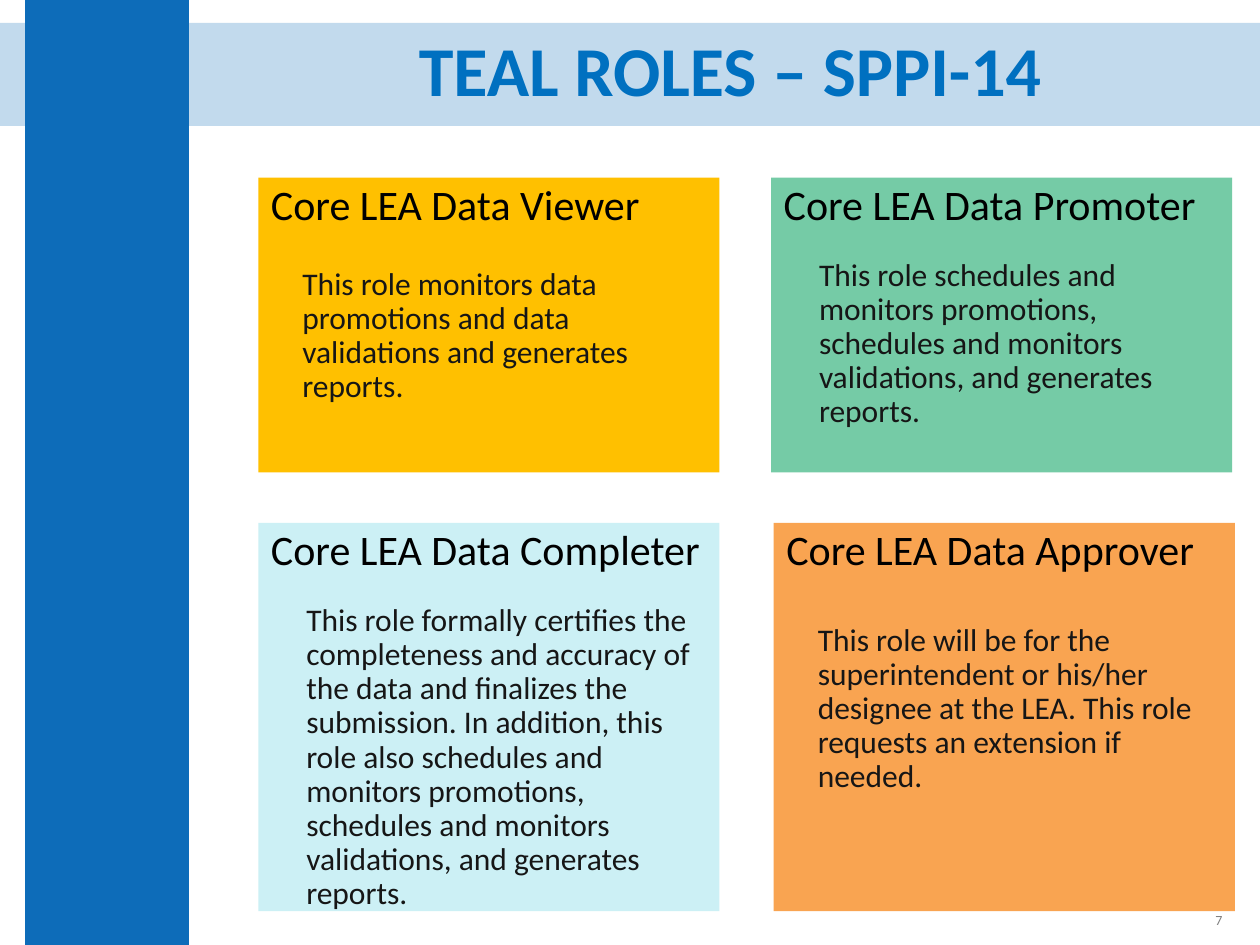
from lxml.etree import SubElement
from pptx import Presentation
from pptx.dml.color import RGBColor
from pptx.enum.shapes import MSO_SHAPE as Shape
from pptx.enum.text import MSO_ANCHOR as Anchor, MSO_AUTO_SIZE as AutoSize, PP_ALIGN as Align
from pptx.oxml.ns import qn
from pptx.util import Pt

COLORS = {
    "bar": "0D6CB9", "title": "0070C0", "heading": "000000", "body": "161616",
    "number": "808080", "viewer": "FFC000", "promoter": "75CBA6",
    "completer": "CCF0F5", "approver": "F9A451",
}
FONT = "Calibri"
COMPARISON_LAYOUT = 4  # a title and four bodies

# Fill, box (left, top, width, height), gap under heading, body indent, heading, body
ROLES = [
    ("viewer", (147.6, 101.5, 263.5, 168.5), 22, 18, "Core LEA Data Viewer",
     "This role monitors data promotions and data validations and generates reports."),
    ("promoter", (440.6, 101.5, 263.5, 168.5), 17.2, 20.2, "Core LEA Data Promoter",
     "This role schedules and monitors promotions, schedules and monitors "
     "validations, and generates reports."),
    ("completer", (147.6, 298.8, 263.5, 221.8), 17.2, 20.2, "Core LEA Data Completer",
     "This role formally certifies the completeness and accuracy of the data and "
     "finalizes the submission. In addition, this role also schedules and monitors "
     "promotions, schedules and monitors validations, and generates reports."),
    ("approver", (442.1, 298.8, 263.5, 221.8), 28.5, 18, "Core LEA Data Approver",
     "This role will be for the superintendent or his/her designee at the LEA. "
     "This role requests an extension if needed."),
]


def color(name):
    return RGBColor.from_string(COLORS[name])


def place(shape, box):
    shape.left, shape.top, shape.width, shape.height = map(Pt, box)


def prepare_frame(shape, anchor):
    frame = shape.text_frame
    frame.word_wrap = True
    frame.auto_size = AutoSize.NONE
    frame.vertical_anchor = anchor
    return frame


def style(paragraph, size, color_name, align=Align.LEFT, bold=False, spacing=0.9, before=0):
    paragraph.alignment = align
    paragraph.line_spacing = spacing
    paragraph.space_before = Pt(before)
    font = paragraph.font
    font.name, font.size, font.bold = FONT, Pt(size), bold
    font.color.rgb = color(color_name)


def remove_bullet(paragraph, indent=0):
    properties = paragraph._p.get_or_add_pPr()
    properties.set("marL", str(Pt(indent)))
    properties.set("indent", "0")
    SubElement(properties, qn("a:buNone"))


def add_bar(slide, box, depth, opacity=100):
    """Add a plain bar behind the text, at the given depth from the back."""
    bar = slide.shapes.add_shape(Shape.RECTANGLE, *map(Pt, box))
    bar.shadow.inherit = False
    bar.line.fill.background()
    bar.fill.solid()
    bar.fill.fore_color.rgb = color("bar")
    if opacity < 100:
        fill_color = bar.element.spPr.find(".//" + qn("a:srgbClr"))
        SubElement(fill_color, qn("a:alpha")).set("val", str(opacity * 1000))
    bar.element.getparent().insert(2 + depth, bar.element)


def fill_title(title, box):
    place(title, box)
    frame = prepare_frame(title, Anchor.MIDDLE)
    frame.text = "TEAL ROLES – SPPI-14"
    style(frame.paragraphs[0], 40, "title", Align.CENTER, bold=True)


def fill_role(card, fill, box, gap, indent, heading, body):
    place(card, box)
    card.fill.solid()
    card.fill.fore_color.rgb = color(fill)
    frame = prepare_frame(card, Anchor.TOP)
    frame.text = f"{heading}\n{body}"
    heading_paragraph, body_paragraph = frame.paragraphs
    remove_bullet(heading_paragraph)
    style(heading_paragraph, 24, "heading")
    remove_bullet(body_paragraph, indent)
    style(body_paragraph, 18, "body", before=gap)


def add_slide_number(slide, box):
    number = slide.shapes.add_textbox(*map(Pt, box))
    frame = prepare_frame(number, Anchor.MIDDLE)
    frame.text = "7"
    style(frame.paragraphs[0], 8, "number", Align.RIGHT, spacing=1.0)


def main():
    presentation = Presentation()
    presentation.slide_width, presentation.slide_height = Pt(720), Pt(540)
    slide = presentation.slides.add_slide(presentation.slide_layouts[COMPARISON_LAYOUT])

    # Background bars
    add_bar(slide, (0, 13, 720, 59), depth=0, opacity=25)
    add_bar(slide, (14.4, 0, 93.6, 540), depth=1)

    # Title and role cards
    fill_title(slide.shapes.title, (147.6, 19.4, 539.3, 45.4))
    cards = [shape for shape in slide.placeholders if shape.placeholder_format.idx > 0]
    for card, role in zip(cards, ROLES):
        fill_role(card, *role)

    # Slide number
    add_slide_number(slide, (543.6, 511.2, 162, 28.8))
    presentation.save("out.pptx")


if __name__ == "__main__":
    main()
